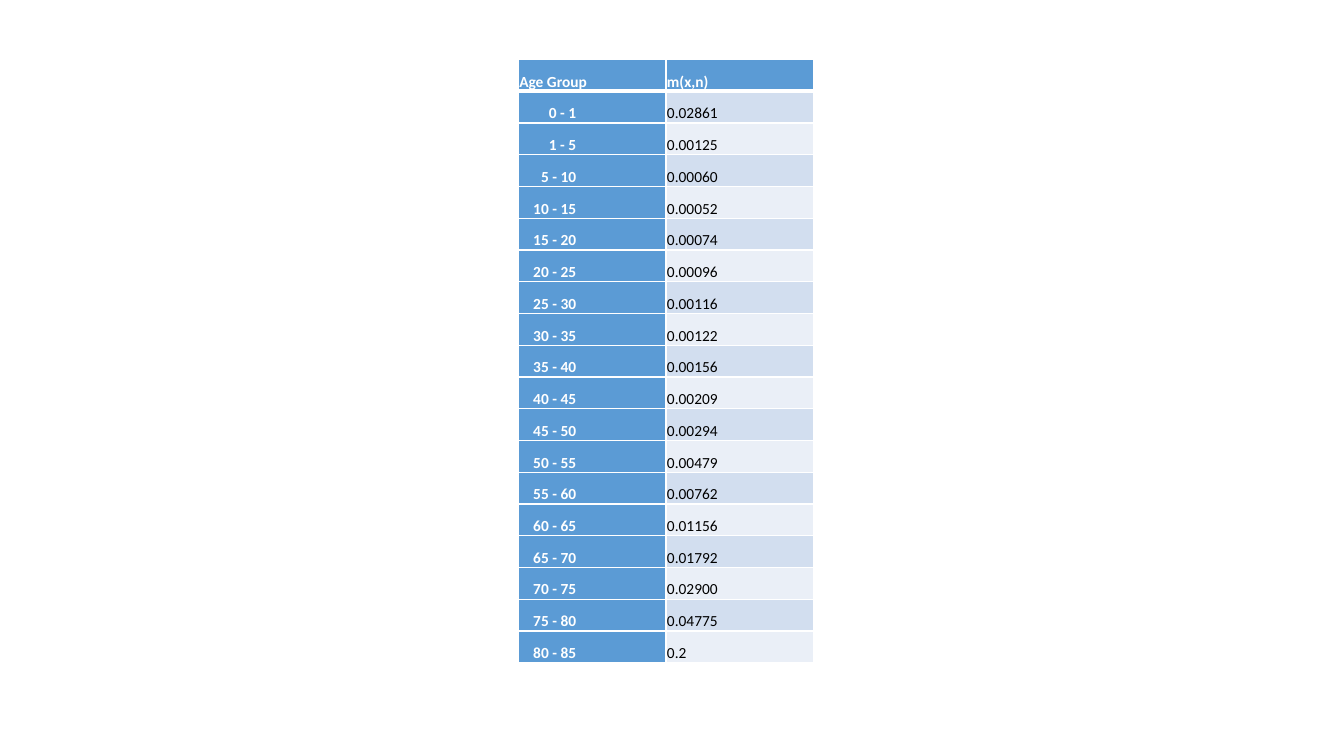
from pptx import Presentation, util as u
from pptx.dml.color import RGBColor
from pptx.enum import text as t
from pptx.oxml import parse_xml
from pptx.oxml.ns import nsdecls

HEADS = ("Age Group", "m(x,n)")
BOUNDS = [0, 1, *range(5, 90, 5)]
RATES = [
    "0.02861", "0.00125", "0.00060", "0.00052", "0.00074", "0.00096",
    "0.00116", "0.00122", "0.00156", "0.00209", "0.00294", "0.00479",
    "0.00762", "0.01156", "0.01792", "0.02900", "0.04775", "0.2",
]
THEME = dict(font="Calibri", size=11, blue="5B9BD5", light="FFFFFF",
             dark="000000", bands=("D2DEEF", "EAEFF7"), thin=1, thick=3)
LEFT, TOP, WIDTH, HIGH = 5.14, 0.59, 2.93, 5.99
PAD, INSET = 0.01, 0.89


def edge(cell, **sides):
    props = cell._tc.get_or_add_tcPr()
    for side, width in sides.items():
        props.append(parse_xml(
            f'<a:ln{side} {nsdecls("a")} w="{u.Pt(width)}"><a:solidFill>'
            f'<a:srgbClr val="{THEME["light"]}"/></a:solidFill></a:ln{side}>'))


def write(cell, words, color, fill, bold=False, align=t.PP_ALIGN.LEFT, right=PAD):
    cell.fill.solid()
    cell.fill.fore_color.rgb = RGBColor.from_string(fill)
    cell.vertical_anchor = t.MSO_ANCHOR.BOTTOM
    cell.margin_left = cell.margin_top = u.Inches(PAD)
    cell.margin_right = u.Inches(right)
    cell.margin_bottom = 0
    para = cell.text_frame.paragraphs[0]
    para.alignment = align
    para.line_spacing = 1.15
    run = para.add_run()
    run.text = words
    run.font.name = THEME["font"]
    run.font.size = u.Pt(THEME["size"])
    run.font.bold = bold
    run.font.color.rgb = RGBColor.from_string(color)


def main():
    deck = Presentation()
    deck.slide_width, deck.slide_height = u.Inches(13.33), u.Inches(7.5)
    slide = deck.slides.add_slide(deck.slide_layouts[6])
    ages = [f"{low} - {high}" for low, high in zip(BOUNDS, BOUNDS[1:])]
    rows = [HEADS, *zip(ages, RATES)]
    table = slide.shapes.add_table(
        len(rows), len(HEADS), u.Inches(LEFT), u.Inches(TOP),
        u.Inches(WIDTH), u.Inches(HIGH)).table
    table.first_col = True
    for r, row in enumerate(rows):
        table.rows[r].height = u.Inches(HIGH / len(rows))
        for c, words in enumerate(row):
            cell = table.cell(r, c)
            edge(cell, L=THEME["thin"], R=THEME["thin"],
                 T=THEME["thick" if r == 1 else "thin"],
                 B=THEME["thick" if r == 0 else "thin"])
            if r and c:
                write(cell, words, THEME["dark"], THEME["bands"][(r - 1) % 2])
            elif r:
                write(cell, words, THEME["light"], THEME["blue"], bold=True,
                      align=t.PP_ALIGN.RIGHT, right=INSET)
            else:
                write(cell, words, THEME["light"], THEME["blue"], bold=True)
    deck.save("out.pptx")


if __name__ == "__main__":
    main()
